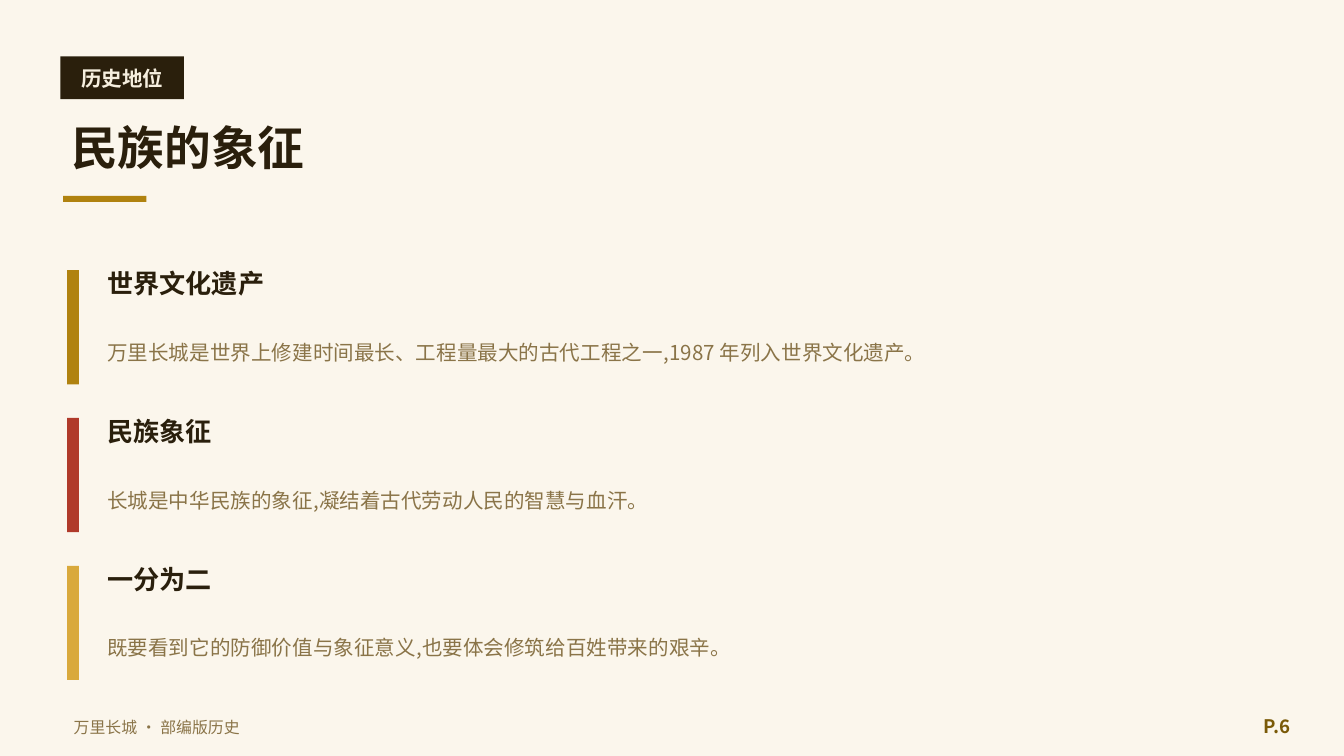
from dataclasses import dataclass
from lxml.etree import SubElement
from pptx import Presentation
from pptx.dml.color import RGBColor
from pptx.enum.shapes import MSO_SHAPE as Shape
from pptx.enum.text import MSO_ANCHOR as Anchor, MSO_AUTO_SIZE as AutoSize, PP_ALIGN as Align
from pptx.oxml.ns import qn
from pptx.util import Pt

FONT = "Noto Sans CJK SC"
INK, GOLD, MUTED = "2A1F0C", "B0820F", "8A7448"

# Format values by text role
TAG = dict(size=Pt(11), bold=True, color="F6EFDF")
TITLE = dict(size=Pt(25), bold=True, color=INK)
HEADING = dict(size=Pt(14), bold=True, color=INK)
BODY = dict(size=Pt(11), bold=False, color=MUTED)
FOOTER = dict(size=Pt(8.5), bold=False, color=MUTED)
PAGE = dict(size=Pt(10), bold=True, color="7A5A08")


@dataclass
class Box:
    left: float
    top: float
    width: float
    height: float

    def lengths(self):
        return [Pt(v) for v in (self.left, self.top, self.width, self.height)]


@dataclass
class Point:
    heading: str
    text: str
    color: str


POINTS = [
    Point("世界文化遗产", "万里长城是世界上修建时间最长、工程量最大的古代工程之一,1987 年列入世界文化遗产。", GOLD),
    Point("民族象征", "长城是中华民族的象征,凝结着古代劳动人民的智慧与血汗。", "B03A2A"),
    Point("一分为二", "既要看到它的防御价值与象征意义,也要体会修筑给百姓带来的艰辛。", "D9A93C"),
]
FIRST_TOP, PITCH = 140.4, 79.2


def paint(fill, color: str) -> None:
    fill.solid()
    fill.fore_color.rgb = RGBColor.from_string(color)


def add_bar(s, box: Box, color: str) -> None:
    sp = s.shapes.add_shape(Shape.RECTANGLE, *box.lengths())
    sp.shadow.inherit = False
    paint(sp.fill, color)
    sp.line.fill.background()


def write(sp, text: str, style: dict, align=Align.LEFT, spacing=None) -> None:
    tf = sp.text_frame
    for name, value in dict(word_wrap=True, auto_size=AutoSize.NONE,
                            vertical_anchor=Anchor.MIDDLE).items():
        setattr(tf, name, value)
    p = tf.paragraphs[0]
    p.alignment = align
    if spacing:
        p.line_spacing = Pt(spacing)
    r = p.add_run()
    r.text = text
    for name, value in style.items():
        if name == "color":
            paint(r.font.fill, value)
        else:
            setattr(r.font, name, value)
    r.font.name = FONT
    # East Asian typeface for the Chinese characters
    SubElement(r.font._element, qn("a:ea"), typeface=FONT)


def add_text(s, box: Box, text: str, style: dict, align=Align.LEFT, spacing=None) -> None:
    write(s.shapes.add_textbox(*box.lengths()), text, style, align, spacing)


def add_point(s, top: float, point: Point) -> None:
    add_bar(s, Box(36, top + 4.3, 6.3, 61.2), point.color)
    add_text(s, Box(50.4, top, 633.6, 23), point.heading, HEADING)
    add_text(s, Box(50.4, top + 24.5, 633.6, 44.6), point.text, BODY, spacing=16)


def main() -> None:
    prs = Presentation()
    prs.slide_width, prs.slide_height = Pt(720), Pt(405)
    s = prs.slides.add_slide(prs.slide_layouts[5])
    paint(s.background.fill, "FBF6EC")

    # Section tag
    add_bar(s, Box(32.4, 30.2, 66.2, 23), INK)
    add_text(s, Box(32.4, 29.5, 66.2, 24.5), "历史地位", TAG, Align.CENTER)

    # Title and its underline
    title = s.shapes.title
    title.left, title.top, title.width, title.height = Box(31, 56.2, 648, 44.6).lengths()
    write(title, "民族的象征", TITLE)
    add_bar(s, Box(33.8, 105, 44.6, 3.2), GOLD)

    # Three points, evenly spaced
    for i, point in enumerate(POINTS):
        add_point(s, FIRST_TOP + i * PITCH, point)

    # Footer and page number
    add_text(s, Box(32.4, 378.7, 432, 21.6), "万里长城 · 部编版历史", FOOTER)
    add_text(s, Box(655.2, 377.3, 43.2, 23), "P.6", PAGE, Align.RIGHT)

    prs.save("out.pptx")


if __name__ == "__main__":
    main()
